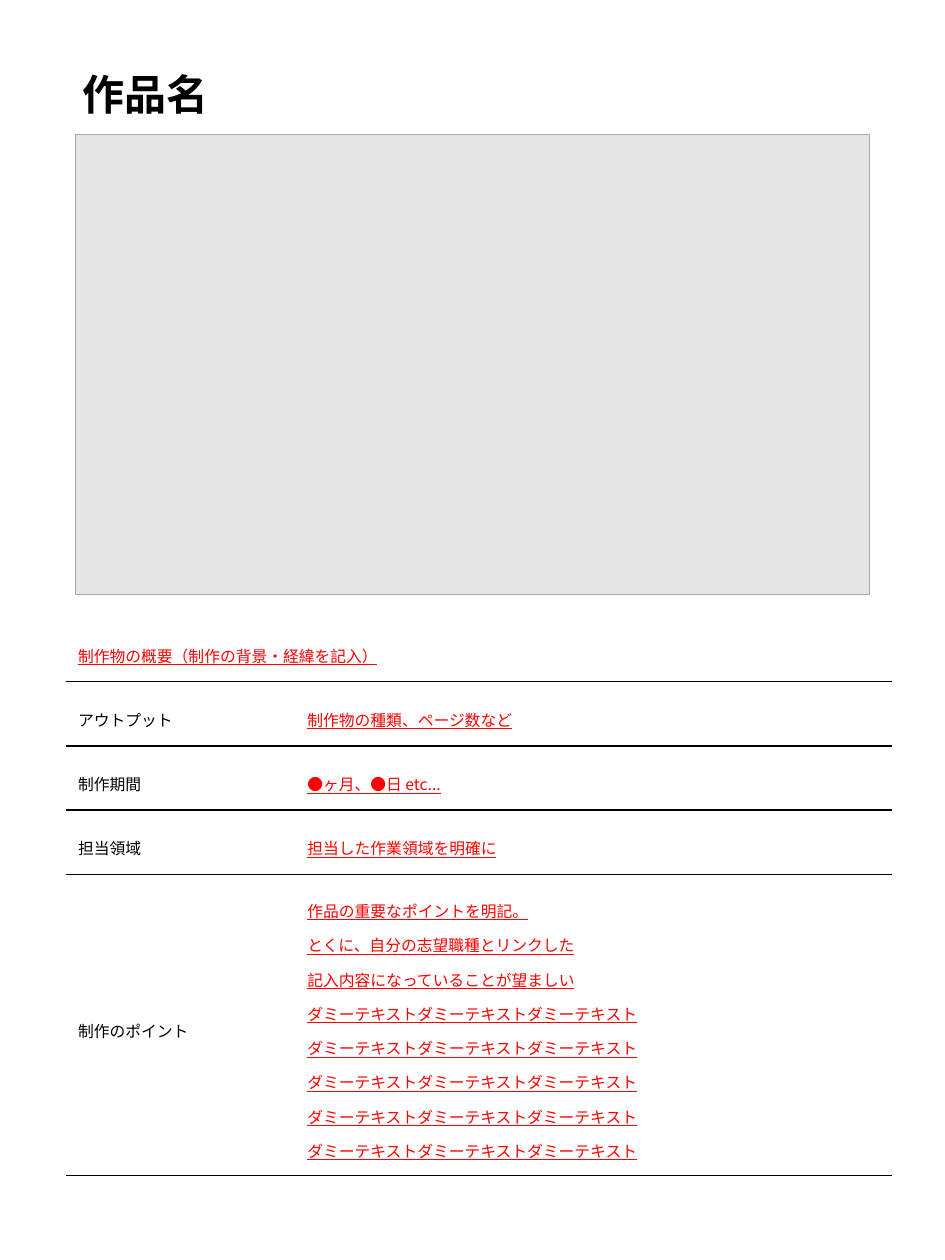
from typing import NamedTuple

from lxml.etree import SubElement
from pptx import Presentation
from pptx.dml.color import RGBColor
from pptx.enum.shapes import MSO_SHAPE
from pptx.enum.text import MSO_ANCHOR
from pptx.oxml import parse_xml
from pptx.oxml.ns import nsdecls, qn
from pptx.text.text import Font
from pptx.util import Inches, Pt

COLORS = {
    "ink": "000000",
    "guide": "FF0000",
    "panel": "E7E6E6",
    "panel_edge": "A6A6A6",
}
CJK_FONT = "Noto Sans CJK JP"
NO_TABLE_STYLE = "{2D5ABB26-0587-4C30-8999-92F81FD0307C}"
COLUMN_WIDTHS = (1.82, 4.74)


class Entry(NamedTuple):
    label: str
    guide: str
    height: float = 0.51


OVERVIEW = "制作物の概要（制作の背景・経緯を記入）"
POINTS = "\n".join(
    ["作品の重要なポイントを明記。\vとくに、自分の志望職種とリンクした\v記入内容になっていることが望ましい"]
    + ["ダミーテキスト" * 3] * 5
)
ENTRIES = [
    Entry("", ""),
    Entry("アウトプット", "制作物の種類、ページ数など"),
    Entry("制作期間", "●ヶ月、●日 etc..."),
    Entry("担当領域", "担当した作業領域を明確に"),
    Entry("制作のポイント", POINTS, 2.39),
]


def rgb(name: str) -> RGBColor:
    return RGBColor.from_string(COLORS[name])


def style_font(font: Font, latin: str, size: float, color: str) -> None:
    """Set size, colour and both the Latin and the East Asian typeface."""
    font.size = Pt(size)
    font.color.rgb = rgb(color)
    font.name = latin
    SubElement(font._element, qn("a:ea"), typeface=CJK_FONT)


def rule_below(cell) -> None:
    """Draw a 1 pt line along the bottom edge of a cell."""
    border = parse_xml(
        f'<a:lnB {nsdecls("a")} w="{Pt(1)}"><a:solidFill>'
        f'<a:srgbClr val="{COLORS["ink"]}"/></a:solidFill></a:lnB>'
    )
    cell._tc.get_or_add_tcPr().insert(0, border)


def fill_cell(cell, text: str, is_guide: bool) -> None:
    cell.vertical_anchor = MSO_ANCHOR.MIDDLE
    cell.fill.background()
    rule_below(cell)
    cell.text_frame.text = text
    for paragraph in cell.text_frame.paragraphs:
        paragraph.line_spacing = 1.5
        style_font(paragraph.font, CJK_FONT, 9, "guide" if is_guide else "ink")
        paragraph.font.underline = is_guide


def add_work_title(slide) -> None:
    title = slide.shapes.add_textbox(Inches(0.56), Inches(0.24), Inches(6.47), Inches(1.05))
    frame = title.text_frame
    frame.word_wrap = True
    frame.vertical_anchor = MSO_ANCHOR.MIDDLE
    frame.text = "作品名"
    heading = frame.paragraphs[0]
    heading.line_spacing = 0.9
    style_font(heading.font, "Arial", 24, "ink")
    heading.font.bold = True


def add_details(slide) -> None:
    holder = slide.shapes.add_table(
        len(ENTRIES), len(COLUMN_WIDTHS), Inches(0.52), Inches(4.9),
        Inches(sum(COLUMN_WIDTHS)), Inches(sum(entry.height for entry in ENTRIES)),
    )
    details = holder.table
    details.first_row = details.horz_banding = False
    for style_id in holder._element.iter(qn("a:tableStyleId")):
        style_id.text = NO_TABLE_STYLE
    for column, width in zip(details.columns, COLUMN_WIDTHS):
        column.width = Inches(width)
    for index, entry in enumerate(ENTRIES):
        details.rows[index].height = Inches(entry.height)
        fill_cell(details.cell(index, 0), entry.label or OVERVIEW, not entry.label)
        fill_cell(details.cell(index, 1), entry.guide, True)
    details.cell(0, 0).merge(details.cell(0, 1))


def add_work_panel(slide) -> None:
    panel = slide.shapes.add_shape(
        MSO_SHAPE.RECTANGLE, Inches(0.6), Inches(1.07), Inches(6.3), Inches(3.65)
    )
    panel.shadow.inherit = False
    panel.fill.solid()
    panel.fill.fore_color.rgb = rgb("panel")
    panel.line.color.rgb = rgb("panel_edge")
    panel.line.width = Pt(0.75)


def main() -> None:
    deck = Presentation()
    deck.slide_width, deck.slide_height = Inches(7.5), Inches(10)
    slide = deck.slides.add_slide(deck.slide_layouts[6])
    add_work_title(slide)
    add_details(slide)
    add_work_panel(slide)
    deck.save("out.pptx")


if __name__ == "__main__":
    main()
